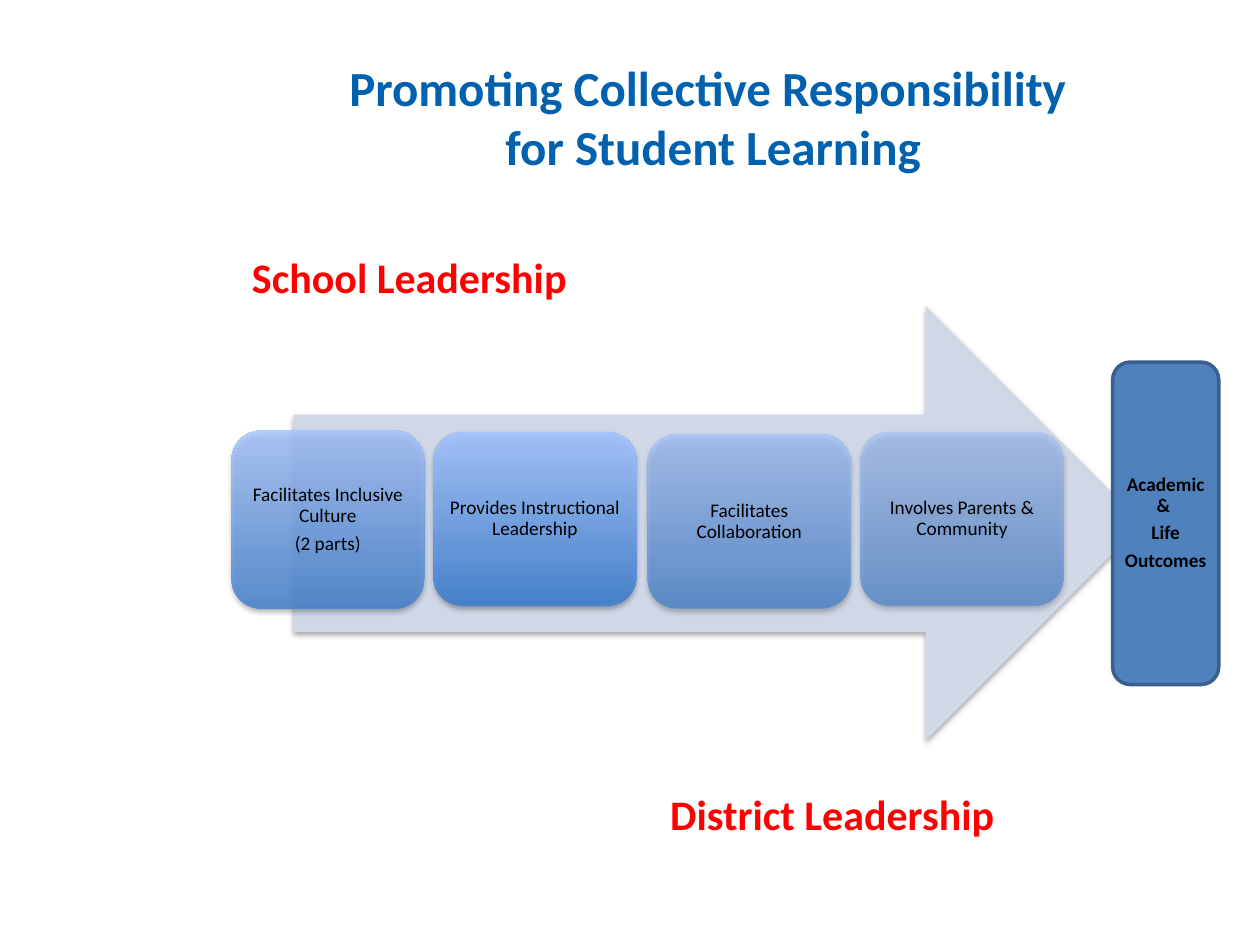
from pptx import Presentation
from pptx.dml.color import RGBColor
from pptx.enum.shapes import MSO_SHAPE as Shape
from pptx.enum.text import MSO_ANCHOR as Anchor, MSO_AUTO_SIZE as AutoSize, PP_ALIGN as Align
from pptx.oxml import parse_xml
from pptx.oxml.ns import nsdecls, qn
from pptx.util import Cm, Pt

TITLE_BLUE = RGBColor(0x00, 0x61, 0xAF)
ARROW_GREY = RGBColor(0xD0, 0xD8, 0xE8)
CARD_DARK = RGBColor(0x3F, 0x7F, 0xCE)
CARD_LIGHT = RGBColor(0xA4, 0xC4, 0xFF)
OUTCOME_FILL = RGBColor(0x4F, 0x81, 0xBD)
OUTCOME_LINE = RGBColor(0x3A, 0x5F, 0x8C)
RED = RGBColor(0xFF, 0x00, 0x00)
BLACK = RGBColor(0x00, 0x00, 0x00)

SHADOW = (
    f'<a:outerShdw {nsdecls("a")} blurRad="40000" dist="23000" dir="5400000" rotWithShape="0">'
    '<a:srgbClr val="000000"><a:alpha val="35000"/></a:srgbClr></a:outerShdw>'
)


def write(shape, lines, size, color, bold=False, align=Align.CENTER):
    frame = shape.text_frame
    frame.text = "\n".join(lines)
    for paragraph in frame.paragraphs:
        paragraph.alignment = align
        font = paragraph.font
        font.name, font.size, font.bold = "Calibri", Pt(size), bold
        font.color.rgb = color


def add_block(kind, box, lines=(), bold=False, shadow=True):
    """Add a shape with centred, tightly set text and an optional soft shadow."""
    shape = slide.shapes.add_shape(kind, *map(Cm, box))
    shape.line.fill.background()
    shape.shadow.inherit = False
    if shadow:
        shape._element.spPr.find(qn("a:effectLst")).append(parse_xml(SHADOW))
    frame = shape.text_frame
    frame.word_wrap = True
    frame.vertical_anchor = Anchor.MIDDLE
    frame.margin_left = frame.margin_right = Cm(0.12)
    frame.margin_top = frame.margin_bottom = Cm(0.12)
    write(shape, lines, 11, BLACK, bold)
    for paragraph in frame.paragraphs:
        paragraph.line_spacing = 0.9
        paragraph.space_after = Pt(4)
    return shape


presentation = Presentation()
presentation.slide_width, presentation.slide_height = Cm(25.4), Cm(19.05)
slide = presentation.slides.add_slide(presentation.slide_layouts[5])

title = slide.shapes.title
title.left, title.top, title.width, title.height = map(Cm, (4.62, 0.76, 19.51, 3.18))
title.text_frame.vertical_anchor = Anchor.MIDDLE
write(title, ["Promoting Collective Responsibility \vfor Student Learning"], 28, TITLE_BLUE, True)

arrow = add_block(Shape.RIGHT_ARROW, (5.92, 6.17, 17.12, 8.76))
arrow.fill.solid()
arrow.fill.fore_color.rgb = ARROW_GREY

cards = [
    ((4.67, 8.68, 3.88, 3.6), 80, ["Facilitates Inclusive Culture", "(2 parts)"]),
    ((8.74, 8.71, 4.09, 3.51), 90, ["Provides Instructional Leadership"]),
    ((13.06, 8.76, 4.09, 3.51), 70, ["Facilitates Collaboration"]),
    ((17.35, 8.71, 4.09, 3.51), 60, ["Involves Parents & Community"]),
]
for box, opacity, lines in cards:
    card = add_block(Shape.ROUNDED_RECTANGLE, box, lines)
    card.fill.gradient()
    card.fill.gradient_angle = 90
    for stop, color in zip(card.fill.gradient_stops, (CARD_DARK, CARD_LIGHT)):
        stop.color.rgb = color
    for color_element in card._element.spPr.find(qn("a:gradFill")).iter(qn("a:srgbClr")):
        color_element.append(parse_xml(f'<a:alpha {nsdecls("a")} val="{opacity * 1000}"/>'))

outcomes = add_block(Shape.ROUNDED_RECTANGLE, (22.43, 7.3, 2.14, 6.5),
                     ["Academic & ", "Life", "Outcomes"], bold=True, shadow=False)
outcomes.fill.solid()
outcomes.fill.fore_color.rgb = OUTCOME_FILL
outcomes.line.color.rgb = OUTCOME_LINE
outcomes.line.width = Pt(2)

labels = [
    ("School Leadership", (4.83, 4.95, 9.53, 2.06), True),
    ("District Leadership", (13.26, 15.77, 7.14, 1.3), False),
]
for text, box, wrap in labels:
    label = slide.shapes.add_textbox(*map(Cm, box))
    label.text_frame.word_wrap = wrap
    label.text_frame.auto_size = AutoSize.SHAPE_TO_FIT_TEXT
    write(label, [text], 24, RED, True, Align.LEFT)

presentation.save("out.pptx")
